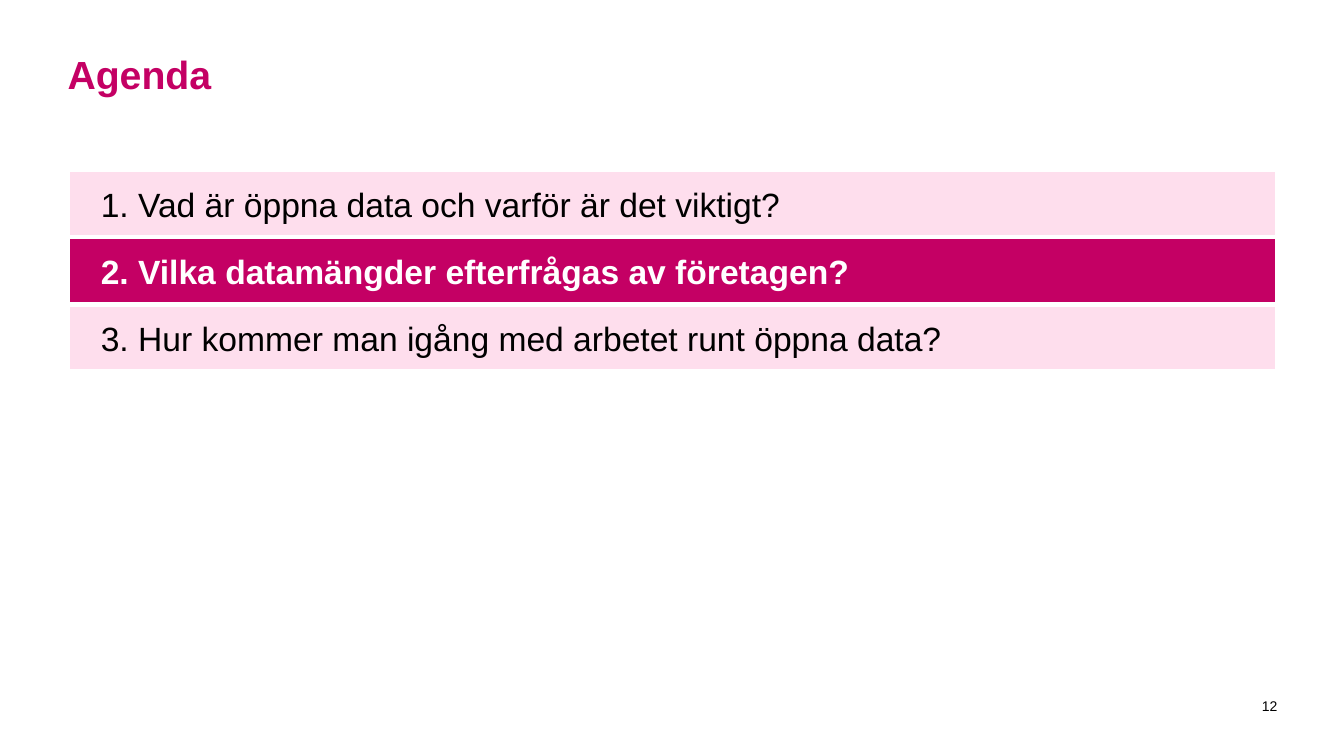
from pptx import Presentation
from pptx.dml.color import RGBColor
from pptx.enum.shapes import MSO_SHAPE
from pptx.enum.text import MSO_ANCHOR, MSO_AUTO_SIZE, PP_ALIGN
from pptx.util import Inches, Pt

RECTANGLE = MSO_SHAPE.RECTANGLE
TOP, MIDDLE = MSO_ANCHOR.TOP, MSO_ANCHOR.MIDDLE
LEFT, RIGHT = PP_ALIGN.LEFT, PP_ALIGN.RIGHT
NO_AUTOFIT = MSO_AUTO_SIZE.NONE

TITLE = "Agenda"
AGENDA_ITEMS = [
    "1. Vad är öppna data och varför är det viktigt?",
    "2. Vilka datamängder efterfrågas av företagen?",
    "3. Hur kommer man igång med arbetet runt öppna data?",
]
CURRENT_ITEM = 1
PAGE_NUMBER = "12"

FONT = "Arial"
MAGENTA, PINK, WHITE, BLACK = "C40064", "FEDEED", "FFFFFF", "000000"
MARGIN, CONTENT_WIDTH = 0.67, 12
AGENDA_TOP, ROW_HEIGHT = 1.69, 0.665
TEXT_INDENT = 0.2


def color(hex_string):
    return RGBColor.from_string(hex_string)


def place(shape, left, top, width, height):
    shape.left, shape.top = Inches(left), Inches(top)
    shape.width, shape.height = Inches(width), Inches(height)


def write(shape, text, size, font_color=BLACK, bold=False, align=LEFT,
          anchor=MIDDLE, insets=(0, 0, 0, 0), indent=0, wrap=False):
    """Fill the shape with one paragraph; insets run left, top, right, bottom."""
    frame = shape.text_frame
    frame.auto_size = NO_AUTOFIT
    frame.word_wrap = wrap
    frame.vertical_anchor = anchor
    (frame.margin_left, frame.margin_top,
     frame.margin_right, frame.margin_bottom) = map(Inches, insets)
    paragraph = frame.paragraphs[0]
    paragraph.alignment = align
    if indent:
        properties = paragraph._p.get_or_add_pPr()
        properties.set("marL", str(Inches(indent)))
        properties.set("indent", "0")
    run = paragraph.add_run()
    run.text = text
    run.font.name = FONT
    run.font.size = Pt(size)
    run.font.bold = bold
    run.font.color.rgb = color(font_color)


def add_agenda_row(slide, index, text):
    current = index == CURRENT_ITEM
    row = slide.shapes.add_shape(
        RECTANGLE, Inches(MARGIN), Inches(AGENDA_TOP + index * ROW_HEIGHT),
        Inches(CONTENT_WIDTH), Inches(ROW_HEIGHT))
    row.shadow.inherit = False
    row.fill.solid()
    row.fill.fore_color.rgb = color(MAGENTA if current else PINK)
    row.line.color.rgb = color(WHITE)
    row.line.width = Pt(3)
    write(row, text, 24, font_color=WHITE if current else BLACK, bold=current,
          insets=(0.13, 0.13, 0, 0.13), indent=TEXT_INDENT)


def main():
    presentation = Presentation()
    presentation.slide_width, presentation.slide_height = Inches(13.33), Inches(7.5)
    slide = presentation.slides.add_slide(presentation.slide_layouts[5])

    title = slide.shapes.title
    place(title, MARGIN, 0.5, CONTENT_WIDTH, 0.91)
    write(title, TITLE, 28, font_color=MAGENTA, bold=True, anchor=TOP, wrap=True)

    for index, text in enumerate(AGENDA_ITEMS):
        add_agenda_row(slide, index, text)

    page_number = slide.shapes.add_textbox(
        Inches(12.43), Inches(6.92), Inches(0.24), Inches(0.16))
    write(page_number, PAGE_NUMBER, 10, align=RIGHT)

    presentation.save("out.pptx")


if __name__ == "__main__":
    main()
